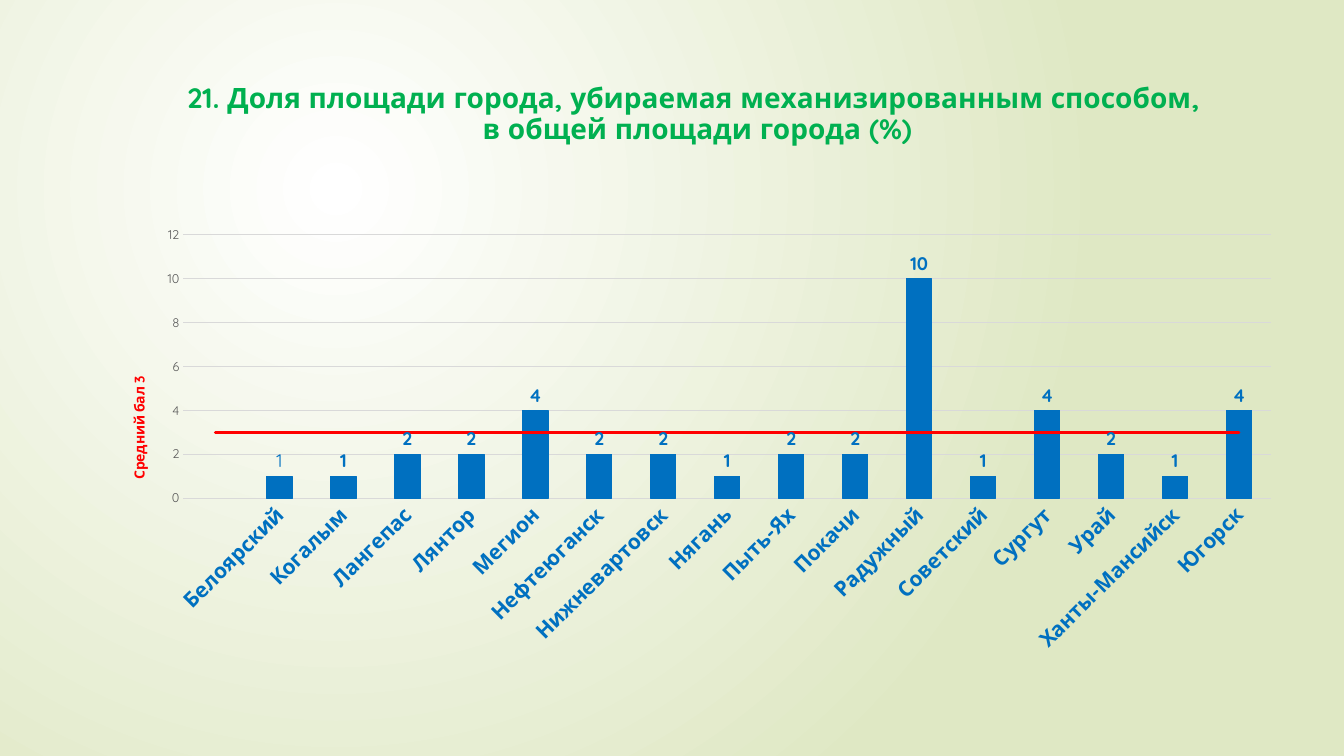
from typing import NamedTuple

from lxml.etree import SubElement
from pptx import Presentation
from pptx.chart.axis import ValueAxis
from pptx.chart.chart import Chart
from pptx.chart.data import CategoryChartData
from pptx.dml.color import RGBColor
from pptx.enum.chart import (XL_CHART_TYPE, XL_LABEL_POSITION, XL_MARKER_STYLE,
                             XL_TICK_MARK)
from pptx.enum.text import MSO_ANCHOR, MSO_AUTO_SIZE, PP_ALIGN
from pptx.oxml import parse_xml
from pptx.oxml.ns import nsdecls, qn
from pptx.slide import Slide
from pptx.text.text import Font
from pptx.util import Emu, Pt

FONT = "Quicksand"
BLUE, RED, GREEN = "0070C0", "FF0000", "00B050"
AVERAGE = 3


class Box(NamedTuple):
    left: int
    top: int
    width: int
    height: int


class City(NamedTuple):
    name: str
    score: int | None


CITIES = [
    City("", None),
    City("Белоярский", 1),
    City("Когалым", 1),
    City("Лангепас", 2),
    City("Лянтор", 2),
    City("Мегион", 4),
    City("Нефтеюганск", 2),
    City("Нижневартовск", 2),
    City("Нягань", 1),
    City("Пыть-Ях", 2),
    City("Покачи", 2),
    City("Радужный", 10),
    City("Советский", 1),
    City("Сургут", 4),
    City("Урай", 2),
    City("Ханты-Мансийск", 1),
    City("Югорск", 4),
]
TITLE_BOX = Box(114, 82, 1100, 61)
CHART_BOX = Box(104, 204, 1121, 434)


def px(n: int) -> Emu:
    return Emu(n * 9525)


def rgb(value: str) -> RGBColor:
    return RGBColor.from_string(value)


def style(font: Font, size: float, color: str, bold: bool = False) -> None:
    font.name, font.size, font.bold = FONT, Pt(size), bold
    font.color.rgb = rgb(color)


def layout_xml(x: float, y: float, w: float = 0, h: float = 0):
    """Manual chart layout in fractions; a size of zero stays automatic."""
    target = '<c:layoutTarget val="inner"/>' if w else ""
    size = f'<c:w val="{w}"/><c:h val="{h}"/>' if w else ""
    return parse_xml(
        f'<c:layout {nsdecls("c")}><c:manualLayout>{target}'
        '<c:xMode val="edge"/><c:yMode val="edge"/>'
        f'<c:x val="{x}"/><c:y val="{y}"/>{size}</c:manualLayout></c:layout>')


def set_layout(parent, layout, before: str) -> None:
    for old in parent.findall(qn("c:layout")):
        parent.remove(old)
    parent.find(qn(before)).addprevious(layout)


def paint_background(s: Slide) -> None:
    fill = s.background.fill
    fill.gradient()
    for stop, color in zip(fill.gradient_stops, ("FFFFFF", "DFE8C4")):
        stop.color.rgb = rgb(color)
    grad = next(s._element.iter(qn("a:gradFill")))
    grad.replace(grad.find(qn("a:lin")), parse_xml(
        f'<a:path {nsdecls("a")} path="circle">'
        '<a:fillToRect l="50000" t="50000" r="100000" b="100000"/></a:path>'))


def add_title(s: Slide, box: Box, text: str) -> None:
    title = s.shapes.title
    title.left, title.top, title.width, title.height = map(px, box)
    tf = title.text_frame
    tf.word_wrap, tf.auto_size = True, MSO_AUTO_SIZE.NONE
    tf.vertical_anchor = MSO_ANCHOR.BOTTOM
    p = tf.paragraphs[0]
    p.text = text
    p.alignment, p.line_spacing = PP_ALIGN.CENTER, 0.9
    style(p.font, 20, GREEN, bold=True)


def move_average_to_line(chart: Chart) -> None:
    """Turn the second column series into a line on the same axes."""
    bars = chart._chartSpace.find(".//" + qn("c:barChart"))
    ser = bars.findall(qn("c:ser"))[1]
    for invert in ser.findall(qn("c:invertIfNegative")):
        ser.remove(invert)
    line = parse_xml(f'<c:lineChart {nsdecls("c")}><c:grouping val="standard"/>'
                     '<c:varyColors val="0"/></c:lineChart>')
    line.append(ser)
    SubElement(line, qn("c:marker")).set("val", "1")
    for axis in bars.findall(qn("c:axId")):
        SubElement(line, qn("c:axId")).set("val", axis.get("val"))
    bars.addnext(line)


def format_value_axis(axis: ValueAxis) -> None:
    axis.minimum_scale, axis.maximum_scale, axis.major_unit = 0, 12, 2
    style(axis.tick_labels.font, 9, "595959")
    grid = axis.major_gridlines.format.line
    grid.color.rgb, grid.width = rgb("D9D9D9"), Pt(0.75)
    tf = axis.axis_title.text_frame
    tf.text = f"Средний бал {AVERAGE}"
    style(tf.paragraphs[0].font, 10, RED, bold=True)
    body = tf._txBody.bodyPr
    body.set("rot", "-5400000")
    body.set("vert", "horz")
    set_layout(axis.axis_title._element, layout_xml(0.015, 0.35), "c:overlay")


def add_score_chart(s: Slide, box: Box) -> None:
    data = CategoryChartData()
    data.categories = [city.name for city in CITIES]
    data.add_series("Series 1", [city.score for city in CITIES])
    data.add_series("Series 2", [AVERAGE] * len(CITIES))
    chart = s.shapes.add_chart(
        XL_CHART_TYPE.COLUMN_CLUSTERED, *map(px, box), data).chart
    chart.has_legend = chart.has_title = False
    style(chart.font, 10, "000000")
    move_average_to_line(chart)

    columns, average = chart.plots
    columns.gap_width, columns.vary_by_categories = 150, False
    scores = columns.series[0]
    scores.format.fill.solid()
    scores.format.fill.fore_color.rgb = rgb(BLUE)
    scores.format.line.color.rgb = rgb(BLUE)
    scores.format.line.width = Pt(0.75)
    labels = scores.data_labels
    labels.show_value, labels.position = True, XL_LABEL_POSITION.OUTSIDE_END
    style(labels.font, 13, BLUE, bold=True)
    first_label = scores.points[1].data_label
    style(first_label.font, 13, BLUE)
    first_label.position = XL_LABEL_POSITION.OUTSIDE_END

    line = average.series[0]
    line.smooth = False
    line.marker.style = XL_MARKER_STYLE.NONE
    line.format.line.color.rgb, line.format.line.width = rgb(RED), Pt(2.25)
    line.format.line._ln.set("cap", "rnd")

    for axis in (chart.category_axis, chart.value_axis):
        axis.major_tick_mark = axis.minor_tick_mark = XL_TICK_MARK.NONE
        axis.format.line.fill.background()
    style(chart.category_axis.tick_labels.font, 15, BLUE, bold=True)
    chart.category_axis._element.txPr.bodyPr.set("rot", "-2700000")
    format_value_axis(chart.value_axis)
    plot_area = chart._chartSpace.find(".//" + qn("c:plotArea"))
    set_layout(plot_area, layout_xml(0.063, 0.045, 0.924, 0.578), "c:barChart")


def main() -> None:
    prs = Presentation()
    prs.slide_width, prs.slide_height = px(1280), px(720)
    s = prs.slides.add_slide(prs.slide_layouts[5])
    paint_background(s)
    add_score_chart(s, CHART_BOX)
    add_title(s, TITLE_BOX,
              "21. Доля площади города, убираемая механизированным способом, \v"
              "в общей площади города (%)")
    prs.save("out.pptx")


if __name__ == "__main__":
    main()
